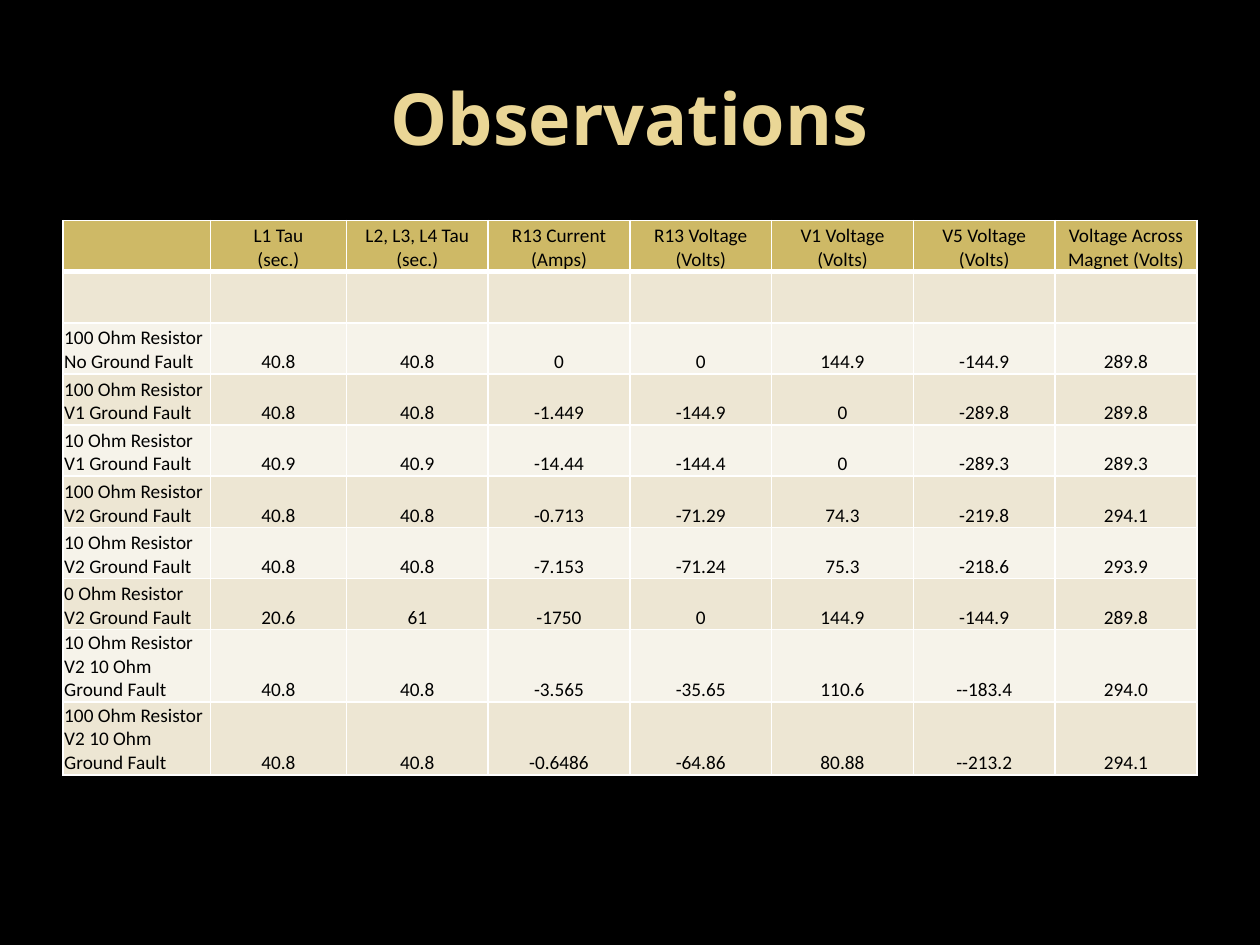
from lxml.etree import SubElement
from pptx import Presentation
from pptx.dml.color import RGBColor
from pptx.enum.text import MSO_ANCHOR, PP_ALIGN
from pptx.oxml.ns import qn
from pptx.util import Inches, Pt

COLORS = {
    "background": "000000",
    "title": "EAD696",
    "header": "CEB966",
    "band_dark": "EDE6D3",
    "band_light": "F6F3EA",
    "border": "FFFFFF",
    "text": "000000",
}

TITLE = "Observations"
HEADERS = [
    "", "L1 Tau\n(sec.)", "L2, L3, L4 Tau (sec.)", "R13 Current (Amps)",
    "R13 Voltage\n(Volts)", "V1 Voltage\n(Volts)", "V5 Voltage\n(Volts)",
    "Voltage Across Magnet (Volts)",
]
READINGS = [
    ("100 Ohm Resistor\nNo Ground Fault",
     "40.8", "40.8", "0", "0", "144.9", "-144.9", "289.8"),
    ("100 Ohm Resistor\nV1 Ground Fault",
     "40.8", "40.8", "-1.449", "-144.9", "0", "-289.8", "289.8"),
    ("10 Ohm Resistor\nV1 Ground Fault",
     "40.9", "40.9", "-14.44", "-144.4", "0", "-289.3", "289.3"),
    ("100 Ohm Resistor\nV2 Ground Fault",
     "40.8", "40.8", "-0.713", "-71.29", "74.3", "-219.8", "294.1"),
    ("10 Ohm Resistor\nV2 Ground Fault",
     "40.8", "40.8", "-7.153", "-71.24", "75.3", "-218.6", "293.9"),
    ("0 Ohm Resistor\nV2 Ground Fault",
     "20.6", "61", "-1750", "0", "144.9", "-144.9", "289.8"),
    ("10 Ohm Resistor\nV2 10 Ohm\nGround Fault",
     "40.8", "40.8", "-3.565", "-35.65", "110.6", "--183.4", "294.0"),
    ("100 Ohm Resistor\nV2 10 Ohm\nGround Fault",
     "40.8", "40.8", "-0.6486", "-64.86", "80.88", "--213.2", "294.1"),
]
ROWS = [HEADERS, [""] * len(HEADERS), *READINGS]

# Table geometry in inches: the last six columns share what the first two leave
LEFT, TOP, WIDTH = 0.5, 1.75, 9
FIRST_COLUMNS = [1.17, 1.08]
COLUMN_WIDTHS = FIRST_COLUMNS + [(WIDTH - sum(FIRST_COLUMNS)) / 6] * 6
TWO_LINE_HEIGHT = 3.25 / 8
THREE_LINE_HEIGHT = 0.57
ROW_HEIGHTS = [
    THREE_LINE_HEIGHT if row[0].count("\n") == 2 else TWO_LINE_HEIGHT
    for row in ROWS
]


def color(name):
    return RGBColor.from_string(COLORS[name])


def style_text(text_frame, font_name, size, color_name, alignment, bold=False):
    for paragraph in text_frame.paragraphs:
        paragraph.alignment = alignment
        for span in paragraph.runs:
            span.font.name = font_name
            span.font.size = Pt(size)
            span.font.bold = bold
            span.font.color.rgb = color(color_name)


def add_borders(cell, top, bottom):
    properties = cell._tc.get_or_add_tcPr()
    for side, points in (("L", 1), ("R", 1), ("T", top), ("B", bottom)):
        line = SubElement(properties, qn(f"a:ln{side}"), w=str(Pt(points)))
        fill = SubElement(line, qn("a:solidFill"))
        SubElement(fill, qn("a:srgbClr"), val=COLORS["border"])


def format_cell(cell, row, column):
    cell.vertical_anchor = MSO_ANCHOR.BOTTOM
    cell.margin_left = cell.margin_right = cell.margin_top = Inches(0.01)
    cell.margin_bottom = 0
    # A thick rule separates the header from the readings
    add_borders(cell, top=3 if row == 1 else 1, bottom=3 if row == 0 else 1)
    band = "header" if row == 0 else "band_dark" if row % 2 else "band_light"
    cell.fill.solid()
    cell.fill.fore_color.rgb = color(band)
    alignment = PP_ALIGN.CENTER if column else PP_ALIGN.LEFT
    style_text(cell.text_frame, "Calibri", 11, "text", alignment)


def main():
    deck = Presentation()
    deck.slide_width, deck.slide_height = Inches(10), Inches(7.5)
    page = deck.slides.add_slide(deck.slide_layouts[5])
    page.background.fill.solid()
    page.background.fill.fore_color.rgb = color("background")

    # Title
    title = page.shapes.title
    title.left, title.top = Inches(LEFT), Inches(0.3)
    title.width, title.height = Inches(WIDTH), Inches(1.25)
    title.text_frame.text = TITLE
    title.text_frame.vertical_anchor = MSO_ANCHOR.MIDDLE
    style_text(title.text_frame, "Open Sans", 41, "title", PP_ALIGN.CENTER, bold=True)

    # Table of readings
    table = page.shapes.add_table(
        len(ROWS), len(HEADERS), Inches(LEFT), Inches(TOP),
        Inches(WIDTH), Inches(sum(ROW_HEIGHTS)),
    ).table
    for column, width in zip(table.columns, COLUMN_WIDTHS):
        column.width = Inches(width)
    for row, height in zip(table.rows, ROW_HEIGHTS):
        row.height = Inches(height)
    for row, texts in enumerate(ROWS):
        for column, text in enumerate(texts):
            cell = table.cell(row, column)
            cell.text_frame.text = text
            format_cell(cell, row, column)

    deck.save("out.pptx")


if __name__ == "__main__":
    main()
